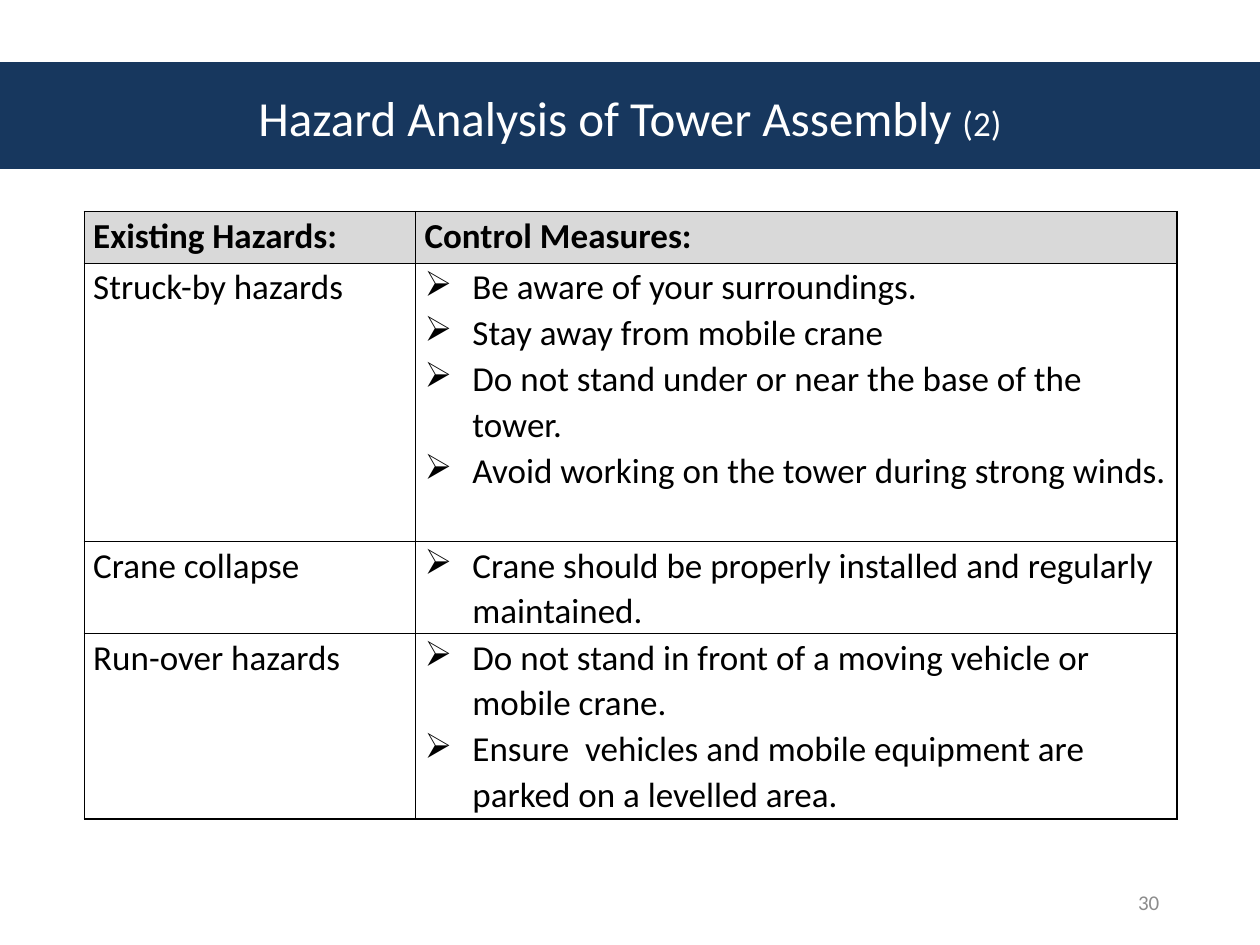
from dataclasses import dataclass

from lxml import etree
from pptx import Presentation
from pptx import util as u
from pptx.dml.color import RGBColor
from pptx.enum import shapes, text
from pptx.oxml.ns import qn

WIDTH, HEIGHT = 10, 7.5
FONT = "Calibri"
NAVY, WHITE, BLACK, GREY, HEADER = "17375E", "FFFFFF", "000000", "8C8C8C", "D9D9D9"
COLUMNS = (2.63, 6.04)
ROWS = (0.41, 2.21, 0.73, 1.47)
INDENT = 0.38
THICK, THIN = 1, 0.5


@dataclass
class Hazard:
    name: str
    measures: tuple[str, ...]


HAZARDS = (
    Hazard("Struck-by hazards", (
        "Be aware of your surroundings.",
        "Stay away from mobile crane",
        "Do not stand under or near the base of the tower.",
        "Avoid working on the tower during strong winds.",
    )),
    Hazard("Crane collapse", (
        "Crane should be properly installed and regularly maintained.",
    )),
    Hazard("Run-over hazards", (
        "Do not stand in front of a moving vehicle or mobile crane.",
        "Ensure  vehicles and mobile equipment are parked on a levelled area.",
    )),
)


def color(value: str) -> RGBColor:
    return RGBColor.from_string(value)


def box(left: float, top: float, width: float, height: float) -> tuple:
    """Turn shares of the slide's size into lengths."""
    return (u.Inches(left * WIDTH), u.Inches(top * HEIGHT),
            u.Inches(width * WIDTH), u.Inches(height * HEIGHT))


def add_run(paragraph, words: str, size: float, ink: str, bold: bool = False) -> None:
    run = paragraph.add_run()
    run.text = words
    run.font.name = FONT
    run.font.size = u.Pt(size)
    run.font.bold = bold
    run.font.color.rgb = color(ink)


def add_label(slide, place: tuple, align, runs: tuple, ink: str) -> None:
    frame = slide.shapes.add_textbox(*place).text_frame
    frame.word_wrap = True
    frame.vertical_anchor = text.MSO_ANCHOR.MIDDLE
    paragraph = frame.paragraphs[0]
    paragraph.alignment = align
    for words, size in runs:
        add_run(paragraph, words, size, ink)


def set_border(cell, side: str, points: float) -> None:
    properties = cell._tc.get_or_add_tcPr()
    line = etree.SubElement(properties, qn(f"a:{side}"), w=str(u.Pt(points)))
    fill = etree.SubElement(line, qn("a:solidFill"))
    etree.SubElement(fill, qn("a:srgbClr"), val=BLACK)


def add_bullet(paragraph) -> None:
    properties = paragraph._p.get_or_add_pPr()
    properties.set("marL", str(u.Inches(INDENT)))
    properties.set("indent", str(-u.Inches(INDENT)))
    etree.SubElement(properties, qn("a:buChar"), char="➢")


def fill_cell(cell, lines: tuple[str, ...], header: bool, bulleted: bool) -> None:
    cell.margin_left = cell.margin_right = u.Inches(0.07)
    cell.margin_top = cell.margin_bottom = 0
    frame = cell.text_frame
    for index, words in enumerate(lines):
        paragraph = frame.add_paragraph() if index else frame.paragraphs[0]
        paragraph.line_spacing = 1.07
        if bulleted:
            add_bullet(paragraph)
        add_run(paragraph, words, 20, BLACK, bold=header)


def add_hazard_table(slide) -> None:
    content = [(("Existing Hazards:",), ("Control Measures:",))]
    content += [((hazard.name,), hazard.measures) for hazard in HAZARDS]
    table = slide.shapes.add_table(
        len(ROWS), len(COLUMNS), u.Inches(0.67), u.Inches(1.68),
        u.Inches(sum(COLUMNS)), u.Inches(sum(ROWS))).table
    for column, width in zip(table.columns, COLUMNS):
        column.width = u.Inches(width)
    for row, height in zip(table.rows, ROWS):
        row.height = u.Inches(height)

    for r, entries in enumerate(content):
        for c, lines in enumerate(entries):
            cell = table.cell(r, c)
            header = r == 0
            fill_cell(cell, lines, header, bulleted=c == 1 and not header)
            # Thin rules under the header and between the columns
            set_border(cell, "lnL", THIN if c == 1 else THICK)
            set_border(cell, "lnR", THIN if c == 0 else THICK)
            set_border(cell, "lnT", THIN if r == 1 else THICK)
            set_border(cell, "lnB", THIN if header else THICK)
            if header:
                cell.fill.solid()
                cell.fill.fore_color.rgb = color(HEADER)
            else:
                cell.fill.background()


def main() -> None:
    presentation = Presentation()
    presentation.slide_width = u.Inches(WIDTH)
    presentation.slide_height = u.Inches(HEIGHT)
    slide = presentation.slides.add_slide(presentation.slide_layouts[6])

    # Title band
    band = slide.shapes.add_shape(shapes.MSO_SHAPE.RECTANGLE, *box(0, 1 / 15, 1, 1 / 9))
    band.shadow.inherit = False
    band.fill.solid()
    band.fill.fore_color.rgb = color(NAVY)
    band.line.color.rgb = color(NAVY)
    band.line.width = u.Pt(0.75)
    add_label(slide, box(0.05, 0.04, 0.9, 1 / 6), text.PP_ALIGN.CENTER,
              (("Hazard Analysis of Tower Assembly ", 28), ("(2)", 20)), WHITE)

    # Hazards and their control measures
    add_hazard_table(slide)

    # Page number
    add_label(slide, box(0.7, 0.93, 0.23, 0.05), text.PP_ALIGN.RIGHT, (("30", 12),), GREY)

    presentation.save("out.pptx")


if __name__ == "__main__":
    main()
